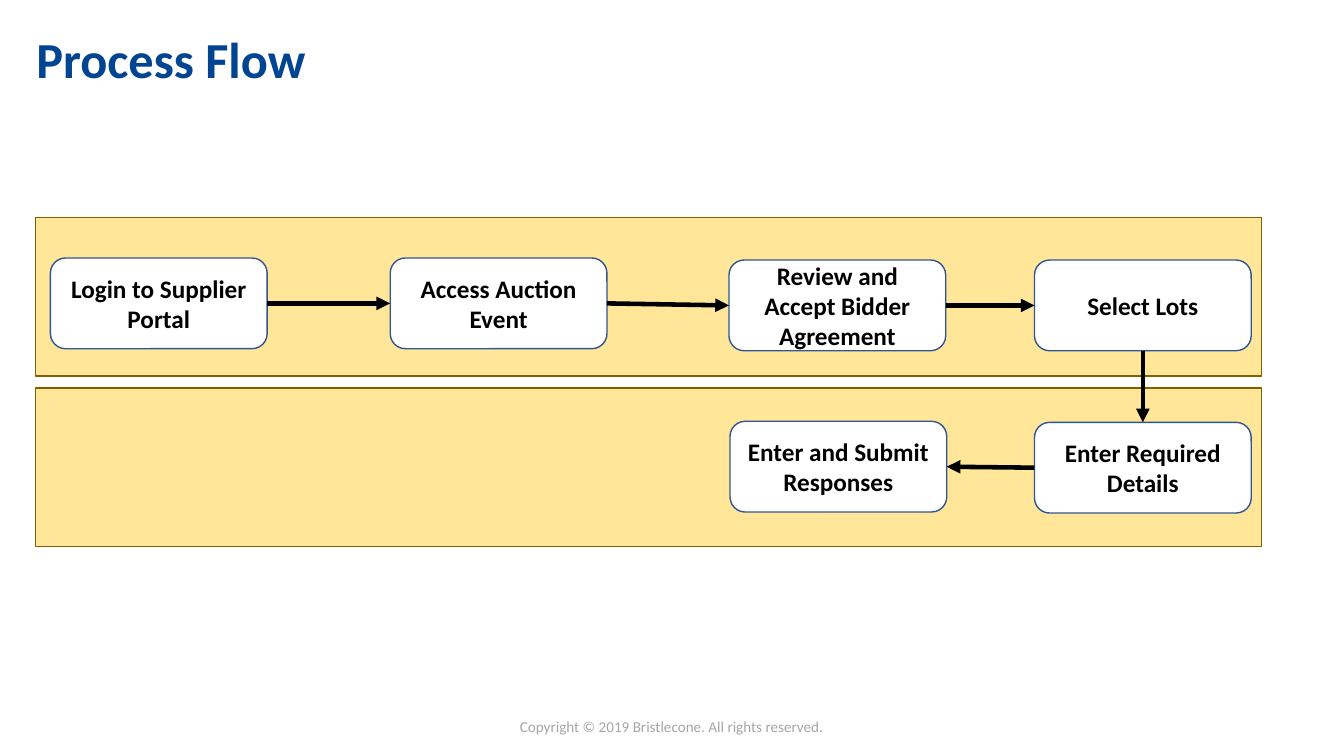
from pptx import Presentation
from pptx.dml.color import RGBColor
from pptx.enum.shapes import MSO_CONNECTOR, MSO_SHAPE
from pptx.enum.text import MSO_ANCHOR as Anchor, MSO_AUTO_SIZE as AutoSize, PP_ALIGN as Align
from pptx.oxml.ns import qn
from pptx.util import Inches, Pt
from lxml.etree import SubElement

NAVY = RGBColor(0x00, 0x44, 0x92)
BLUE = RGBColor(0x32, 0x54, 0x91)
SAND = RGBColor(0xFF, 0xE6, 0x99)
OLIVE = RGBColor(0x80, 0x60, 0x00)
GREY = RGBColor(0xA6, 0xA6, 0xA6)
WHITE = RGBColor(0xFF, 0xFF, 0xFF)
BLACK = RGBColor(0x00, 0x00, 0x00)

TOP, LEFT, BOTTOM, RIGHT = range(4)
LANE_TOPS = (3.85, 2.16)
STEP_SIZE = (2.15, 0.9)
STEPS = {
    "login": ("Login to Supplier Portal", 0.5, 2.56),
    "access": ("Access Auction Event", 3.87, 2.56),
    "review": ("Review and Accept Bidder Agreement", 7.23, 2.58),
    "lots": ("Select Lots", 10.26, 2.58),
    "details": ("Enter Required Details", 10.26, 4.19),
    "submit": ("Enter and Submit Responses", 7.24, 4.18),
}
ARROWS = (
    ("login", RIGHT, "access", LEFT),
    ("access", RIGHT, "review", LEFT),
    ("review", RIGHT, "lots", LEFT),
    ("lots", BOTTOM, "details", TOP),
    ("details", LEFT, "submit", RIGHT),
)


def set_all(target, values):
    for name, value in values.items():
        setattr(target, name, value)


class FlowPage:
    font_name = "Calibri"

    def __init__(self, deck):
        self.page = deck.slides.add_slide(deck.slide_layouts[5])

    def put_text(self, shape, text, color, font, frame, para):
        """Fill a shape with one formatted paragraph."""
        set_all(shape.text_frame, {"word_wrap": True, **frame})
        line = shape.text_frame.paragraphs[0]
        set_all(line, para)
        span = line.add_run()
        span.text = text
        set_all(span.font, {"name": self.font_name, **font})
        span.font.color.rgb = color

    def title(self, text, *bounds):
        title = self.page.shapes.title
        set_all(title, dict(zip(("left", "top", "width", "height"), map(Inches, bounds))))
        self.put_text(title, text, NAVY, {"size": Pt(36), "bold": True},
                      {"vertical_anchor": Anchor.TOP, "auto_size": AutoSize.NONE},
                      {"alignment": Align.LEFT, "line_spacing": 0.9})

    def footer(self, text, *bounds):
        box = self.page.shapes.add_textbox(*map(Inches, bounds))
        self.put_text(box, text, GREY, {"size": Pt(10.8)},
                      {"auto_size": AutoSize.SHAPE_TO_FIT_TEXT}, {"alignment": Align.CENTER})

    def panel(self, kind, fill, outline, *bounds):
        shape = self.page.shapes.add_shape(kind, *map(Inches, bounds))
        shape.shadow.inherit = False
        shape.fill.solid()
        shape.fill.fore_color.rgb = fill
        shape.line.color.rgb = outline
        shape.line.width = Pt(1)
        return shape

    def step(self, text, left, top):
        shape = self.panel(MSO_SHAPE.ROUNDED_RECTANGLE, WHITE, BLUE, left, top, *STEP_SIZE)
        self.put_text(shape, text, BLACK, {"size": Pt(18), "bold": True},
                      {"vertical_anchor": Anchor.MIDDLE}, {"alignment": Align.CENTER})
        return shape

    def arrow(self, source, source_side, target, target_side):
        arrow = self.page.shapes.add_connector(MSO_CONNECTOR.STRAIGHT, 0, 0, 0, 0)
        arrow.begin_connect(source, source_side)
        arrow.end_connect(target, target_side)
        arrow.line.color.rgb = BLACK
        arrow.line.width = Pt(3.25)
        properties = arrow._element.spPr
        SubElement(properties.find(qn("a:ln")), qn("a:tailEnd"), type="triangle")
        SubElement(properties, qn("a:effectLst"))


def main():
    deck = Presentation()
    set_all(deck, {"slide_width": Inches(13.33), "slide_height": Inches(7.5)})
    flow = FlowPage(deck)
    flow.footer("Copyright © 2019 Bristlecone. All rights reserved.", 4.37, 7.07, 4.58, 0.28)
    for top in LANE_TOPS:
        flow.panel(MSO_SHAPE.RECTANGLE, SAND, OLIVE, 0.35, top, 12.16, 1.57)
    flow.title("Process Flow", 0.26, 0.3, 10.1, 1.13)
    steps = {name: flow.step(*details) for name, details in STEPS.items()}
    for source, source_side, target, target_side in ARROWS:
        flow.arrow(steps[source], source_side, steps[target], target_side)
    deck.save("out.pptx")


if __name__ == "__main__":
    main()
